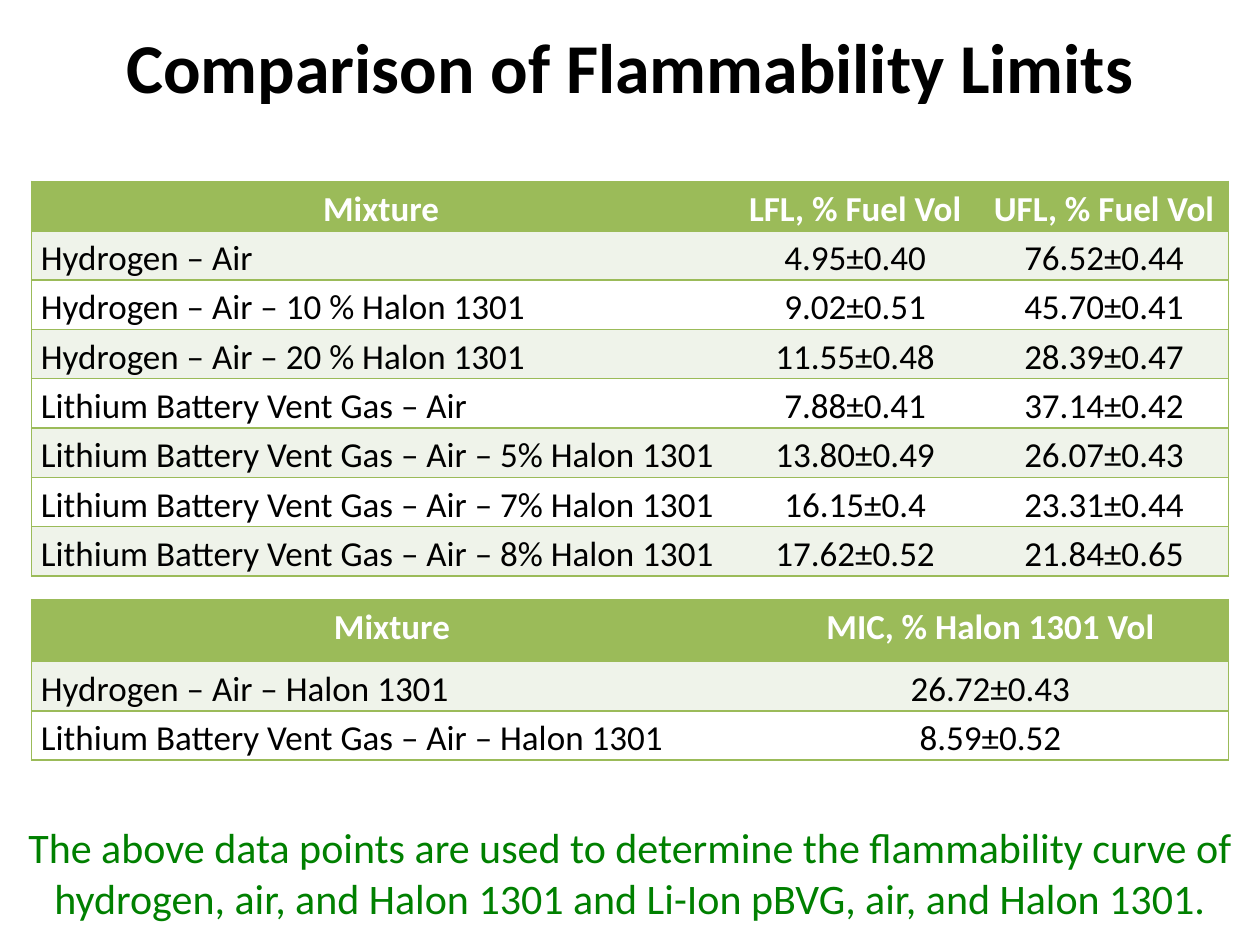
"""Build the slide that compares flammability limits."""
from lxml import etree
from pptx import Presentation
from pptx.dml.color import RGBColor
from pptx.enum.text import MSO_ANCHOR, PP_ALIGN
from pptx.oxml.ns import qn
from pptx.util import Pt

LEFT, CENTER = PP_ALIGN.LEFT, PP_ALIGN.CENTER
TOP, MIDDLE = MSO_ANCHOR.TOP, MSO_ANCHOR.MIDDLE
BLACK = RGBColor(0x00, 0x00, 0x00)
WHITE = RGBColor(0xFF, 0xFF, 0xFF)
GREEN = RGBColor(0x9B, 0xBB, 0x59)
PALE = RGBColor(0xEF, 0xF3, 0xEA)
DARK_GREEN = RGBColor(0x00, 0x80, 0x00)
FONT = "Calibri"
ROW_HEIGHT = 28.2

LIMITS = [
    ("Mixture", "LFL, % Fuel Vol", "UFL, % Fuel Vol"),
    ("Hydrogen – Air", "4.95±0.40", "76.52±0.44"),
    ("Hydrogen – Air – 10 % Halon 1301", "9.02±0.51", "45.70±0.41"),
    ("Hydrogen – Air – 20 % Halon 1301", "11.55±0.48", "28.39±0.47"),
    ("Lithium Battery Vent Gas – Air", "7.88±0.41", "37.14±0.42"),
    ("Lithium Battery Vent Gas – Air – 5% Halon 1301", "13.80±0.49", "26.07±0.43"),
    ("Lithium Battery Vent Gas – Air – 7% Halon 1301", "16.15±0.4", "23.31±0.44"),
    ("Lithium Battery Vent Gas – Air – 8% Halon 1301", "17.62±0.52", "21.84±0.65"),
]
INERTING = [
    ("Mixture", "MIC, % Halon 1301 Vol"),
    ("Hydrogen – Air – Halon 1301", "26.72±0.43"),
    ("Lithium Battery Vent Gas – Air – Halon 1301", "8.59±0.52"),
]


def write(tf, text, size=20, color=BLACK, bold=False, align=CENTER, spacing=None):
    p = tf.paragraphs[0]
    p.alignment = align
    p.line_spacing = spacing
    r = p.add_run()
    r.text = text
    r.font.name = FONT
    r.font.size = Pt(size)
    r.font.bold = bold
    r.font.color.rgb = color


class SlideBuilder:
    def __init__(self, s, border=GREEN, border_width=1):
        self.s = s
        self.border = border
        self.border_width = border_width

    def text(self, x, y, w, h, text, anchor=TOP, **fmt):
        tf = self.s.shapes.add_textbox(Pt(x), Pt(y), Pt(w), Pt(h)).text_frame
        tf.word_wrap = True
        tf.vertical_anchor = anchor
        write(tf, text, **fmt)

    def borders(self, cell, first, last):
        tc_pr = cell._tc.get_or_add_tcPr()
        sides = (("a:lnL", first), ("a:lnR", last), ("a:lnT", True), ("a:lnB", True))
        for i, (tag, visible) in enumerate(sides):
            ln = etree.Element(qn(tag), w=str(Pt(self.border_width)))
            if visible:
                fill = etree.SubElement(ln, qn("a:solidFill"))
                etree.SubElement(fill, qn("a:srgbClr"), val=str(self.border))
            else:
                etree.SubElement(ln, qn("a:noFill"))
            tc_pr.insert(i, ln)

    def table(self, x, y, widths, rows, header_height=ROW_HEIGHT):
        heights = [header_height] + [ROW_HEIGHT] * (len(rows) - 1)
        table = self.s.shapes.add_table(
            len(rows), len(widths), Pt(x), Pt(y), Pt(sum(widths)), Pt(sum(heights))
        ).table
        for column, width in zip(table.columns, widths):
            column.width = Pt(width)
        for i, (row, height) in enumerate(zip(rows, heights)):
            table.rows[i].height = Pt(height)
            header = i == 0
            for j, text in enumerate(row):
                cell = table.cell(i, j)
                cell.margin_left = cell.margin_right = Pt(5.4)
                cell.margin_top = cell.margin_bottom = 0
                cell.fill.solid()
                cell.fill.fore_color.rgb = GREEN if header else PALE if i % 2 else WHITE
                self.borders(cell, j == 0, j == len(widths) - 1)
                write(cell.text_frame, text, color=WHITE if header else BLACK,
                      bold=header, align=CENTER if header or j else LEFT, spacing=1.15)


def main():
    prs = Presentation()
    prs.slide_width, prs.slide_height = Pt(720), Pt(540)
    b = SlideBuilder(prs.slides.add_slide(prs.slide_layouts[6]))
    b.table(18, 103.7, (399.6, 142.2, 142.2), LIMITS)
    b.table(18, 342.7, (412, 272), INERTING, header_height=35.3)
    b.text(36, 1.5, 648, 72, "Comparison of Flammability Limits",
           anchor=MIDDLE, size=40, bold=True)
    b.text(0, 466, 720, 65.5,
           "The above data points are used to determine the flammability curve of "
           "hydrogen, air, and Halon 1301 and Li-Ion pBVG, air, and Halon 1301.",
           size=24, color=DARK_GREEN)
    prs.save("out.pptx")


if __name__ == "__main__":
    main()
